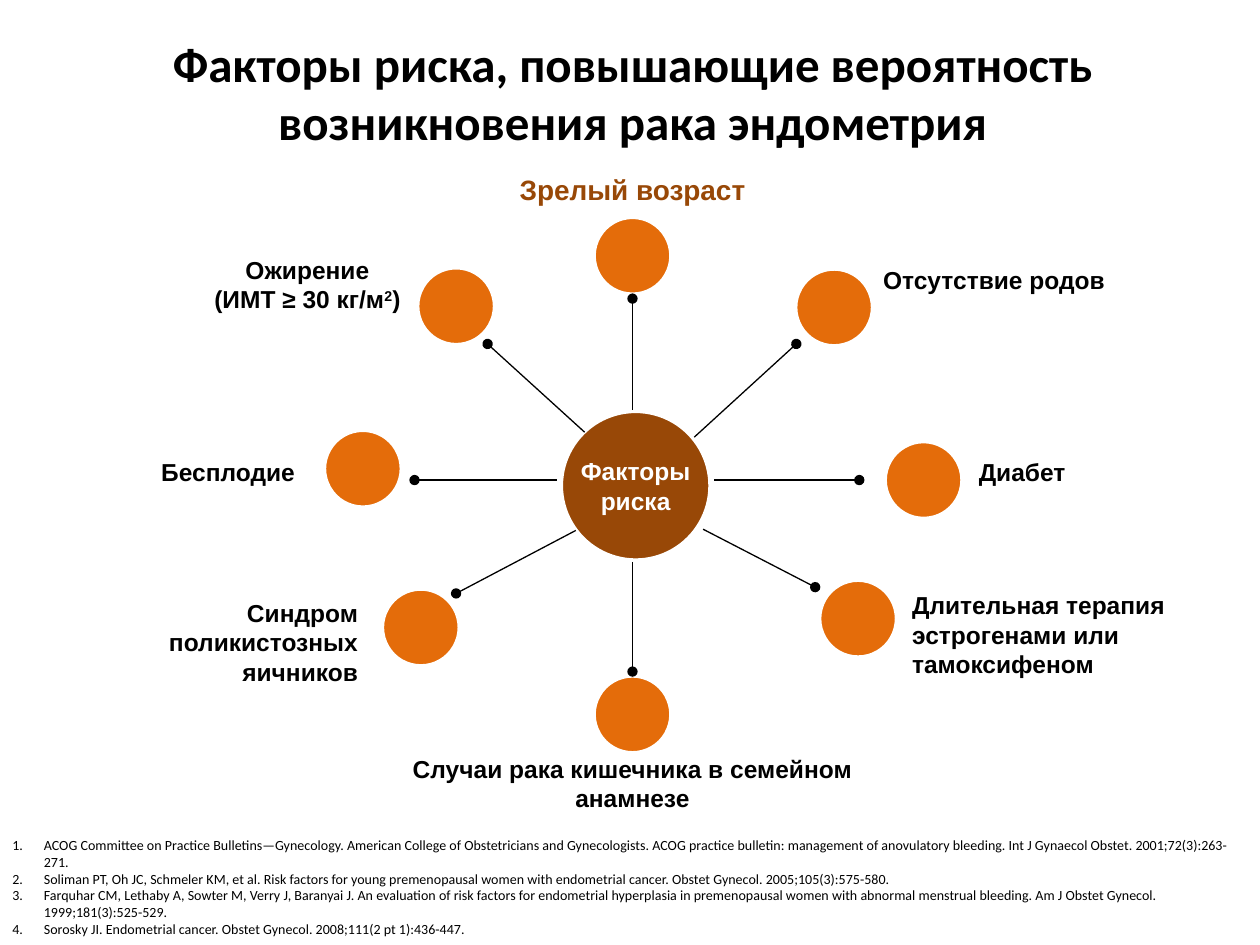
from lxml.etree import SubElement
from pptx import Presentation
from pptx.dml.color import RGBColor
from pptx.enum.shapes import MSO_CONNECTOR as Link, MSO_SHAPE as Kind
from pptx.enum.text import MSO_ANCHOR as Anchor, MSO_AUTO_SIZE as Fit, PP_ALIGN as Align
from pptx.oxml.ns import qn
from pptx.util import Inches, Pt

BLACK = RGBColor(0x00, 0x00, 0x00)
WHITE = RGBColor(0xFF, 0xFF, 0xFF)
BROWN = RGBColor(0x98, 0x48, 0x07)
ORANGE = RGBColor(0xE4, 0x6C, 0x0A)

LEFT, MID, RIGHT = Align.LEFT, Align.CENTER, Align.RIGHT
DOT = 0.68

TITLE = "Факторы риска, повышающие вероятность возникновения рака эндометрия"

LABELS = [
    ("Отсутствие родов", (6.91, 2.1, 2.45, 0.24), LEFT),
    ("Диабет", (7.67, 3.62, 2.16, 0.24), LEFT),
    ("Длительная терапия эстрогенами или тамоксифеном", (7.14, 4.68, 2.45, 0.71), LEFT),
    ("Случаи рака кишечника в семейном анамнезе", (3.22, 5.98, 3.6, 0.47), MID),
    ("Синдром поликистозных яичников", (0.47, 4.74, 2.47, 0.71), RIGHT),
    ("Бесплодие", (-0.02, 3.62, 2.46, 0.24), RIGHT),
    ("Ожирение\n(ИМТ ≥ 30 кг/м^2^)", (0.64, 2.02, 3.6, 0.47), MID),
]

DOTS = [
    (4.68, 1.69), (6.28, 2.1), (6.99, 3.47), (6.47, 4.57),
    (4.68, 5.33), (3, 4.64), (2.54, 3.38), (3.28, 2.09),
]

SPOKES = [
    ((5.02, 3.25), (5.02, 2.37)),
    ((5.51, 3.47), (6.32, 2.73)),
    ((5.67, 3.81), (6.82, 3.81)),
    ((5.58, 4.2), (6.47, 4.66)),
    ((5.02, 4.46), (5.02, 5.33)),
    ((4.57, 4.21), (3.62, 4.71)),
    ((4.42, 3.81), (3.29, 3.81)),
    ((4.64, 3.43), (3.87, 2.73)),
]

SOURCES = [
    "ACOG Committee on Practice Bulletins—Gynecology. American College of Obstetricians "
    "and Gynecologists. ACOG practice bulletin: management of anovulatory bleeding. "
    "Int J Gynaecol Obstet. 2001;72(3):263-271.",
    "Soliman PT, Oh JC, Schmeler KM, et al. Risk factors for young premenopausal women "
    "with endometrial cancer. Obstet Gynecol. 2005;105(3):575-580.",
    "Farquhar CM, Lethaby A, Sowter M, Verry J, Baranyai J. An evaluation of risk factors "
    "for endometrial hyperplasia in premenopausal women with abnormal menstrual bleeding. "
    "Am J Obstet Gynecol. 1999;181(3):525-529.",
    "Sorosky JI. Endometrial cancer. Obstet Gynecol. 2008;111(2 pt 1):436-447.",
]


def write(shape, text, size=14, font="Arial", color=BLACK, bold=True, align=MID,
          anchor=Anchor.MIDDLE, inset=(0, 0, 0, 0), fit=Fit.NONE, number=False):
    """Fill a shape with one paragraph a line; text between carets is raised."""
    frame = shape.text_frame
    frame.word_wrap = True
    frame.auto_size = fit
    frame.vertical_anchor = anchor
    (frame.margin_left, frame.margin_top,
     frame.margin_right, frame.margin_bottom) = map(Inches, inset)
    for i, line in enumerate(text.split("\n")):
        para = frame.add_paragraph() if i else frame.paragraphs[0]
        para.alignment = align
        if number:
            props = para._p.get_or_add_pPr()
            props.set("marL", str(Inches(0.25)))
            props.set("indent", str(-Inches(0.25)))
            SubElement(props, qn("a:buAutoNum"), type="arabicPeriod")
        for j, part in enumerate(line.split("^")):
            run = para.add_run()
            run.text = part
            run.font.size = Pt(size)
            run.font.name = font
            run.font.bold = bold
            run.font.color.rgb = color
            if j % 2:
                run._r.get_or_add_rPr().set("baseline", "30000")


def add_text(slide, text, box, **style):
    """Add a text box."""
    write(slide.shapes.add_textbox(*map(Inches, box)), text, **style)


def add_label(slide, text, box, align, **style):
    """Add a factor label, padded on the side that faces its dot."""
    inset = (0.1 * (align == LEFT), 0, 0.1 * (align == RIGHT), 0)
    add_text(slide, text, box, align=align, inset=inset, fit=Fit.SHAPE_TO_FIT_TEXT, **style)


def add_disc(slide, left, top, size, color):
    """Add a filled circle with a wide white rim."""
    disc = slide.shapes.add_shape(Kind.OVAL, *map(Inches, (left, top, size, size)))
    disc.shadow.inherit = False
    disc.fill.solid()
    disc.fill.fore_color.rgb = color
    disc.line.color.rgb = WHITE
    disc.line.width = Pt(7)
    return disc


def add_spoke(slide, start, end):
    """Add a thin line with a round tip at its outer end."""
    spoke = slide.shapes.add_connector(Link.STRAIGHT, *map(Inches, start + end))
    spoke.line.color.rgb = BLACK
    spoke.line.width = Pt(0.75)
    SubElement(spoke.line._get_or_add_ln(), qn("a:tailEnd"), type="oval")
    SubElement(spoke._element.spPr, qn("a:effectLst"))


def main():
    """Build the slide and save it."""
    deck = Presentation()
    deck.slide_width, deck.slide_height = Inches(10), Inches(7.5)
    slide = deck.slides.add_slide(deck.slide_layouts[6])
    add_text(slide, TITLE, (0.47, 0.21, 9.1, 1.04), size=28, font="Calibri",
             inset=(0.1, 0.05, 0.1, 0.05))
    hub = add_disc(slide, 4.42, 3.23, 1.25, BROWN)
    write(hub, "Факторы риска", color=WHITE)
    for left, top in DOTS:
        add_disc(slide, left, top, DOT, ORANGE)
    for start, end in SPOKES:
        add_spoke(slide, start, end)
    add_label(slide, "Зрелый возраст", (3.22, 1.37, 3.6, 0.27), MID, size=16, color=BROWN)
    for text, box, align in LABELS:
        add_label(slide, text, box, align)
    add_text(slide, "\n".join(SOURCES), (0, 6.59, 10.04, 0.91), size=8, font="Calibri",
             bold=False, align=LEFT, anchor=Anchor.TOP, inset=(0.1, 0.05, 0.1, 0.05),
             fit=Fit.SHAPE_TO_FIT_TEXT, number=True)
    deck.save("out.pptx")


if __name__ == "__main__":
    main()
